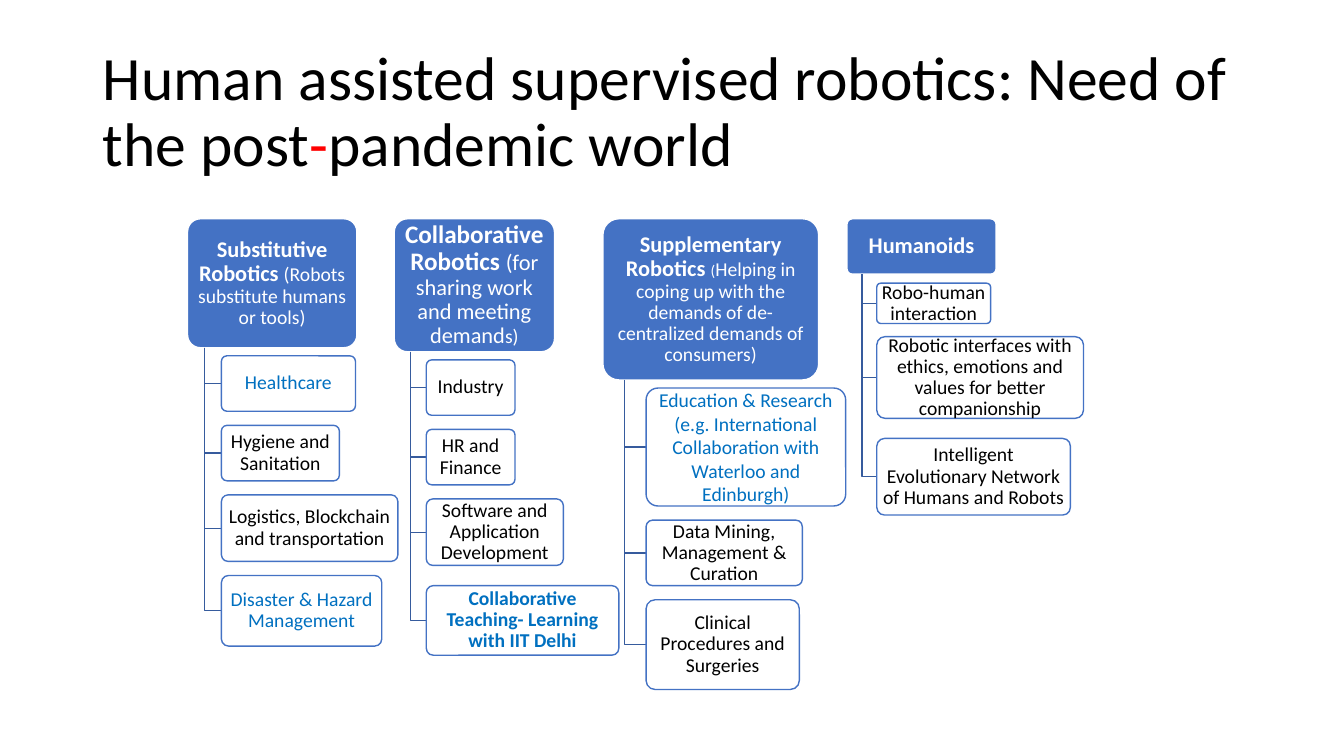
"""Builds the slide on four kinds of human assisted robotics as columns of linked boxes."""
from lxml import etree
from pptx import Presentation
from pptx import util as u
from pptx.dml.color import RGBColor
from pptx.enum import shapes, text
from pptx.oxml.ns import qn

FONT = "Calibri"
BLACK = RGBColor(0x00, 0x00, 0x00)
WHITE = RGBColor(0xFF, 0xFF, 0xFF)
RED = RGBColor(0xFF, 0x00, 0x00)
BLUE = RGBColor(0x44, 0x72, 0xC4)
LINK_BLUE = RGBColor(0x36, 0x5B, 0x9D)
ACCENT = RGBColor(0x00, 0x70, 0xC0)

HEADER_TOP = 2.17
TRUNK_SHARE = 0.1
CHILD_SHARE = 0.2

COLUMNS = [
    ((1.86, 1.68, 1.28),
     [("Substitutive Robotics ", 16, True), ("(Robots substitute humans or tools)", 14, False)],
     [(3.53, 1.33, 0.55, "Healthcare", ACCENT),
      (4.22, 1.17, 0.55, "Hygiene and Sanitation", BLACK),
      (4.91, 1.75, 0.66, "Logistics, Blockchain and transportation", BLACK),
      (5.71, 1.59, 0.7, "Disaster & Hazard Management", ACCENT)]),
    ((3.91, 1.59, 1.32),
     [("Collaborative Robotics ", 18, True), ("(for sharing work and meeting demand", 16, False),
      ("s)", 14, False)],
     [(3.57, 0.88, 0.55, "Industry", BLACK),
      (4.26, 0.88, 0.55, "HR and Finance", BLACK),
      (4.95, 1.36, 0.66, "Software and Application Development", BLACK),
      (5.81, 1.91, 0.69, "Collaborative Teaching- Learning with IIT Delhi", ACCENT, True)]),
    ((5.98, 2.14, 1.6),
     [("Supplementary Robotics ", 16, True), ("(", 11, False),
      ("Helping in coping up with the demands of de-centralized demands of consumers)", 14, False)],
     [(3.85, 1.98, 1.17, "Education & Research\n"
       "(e.g. International Collaboration with Waterloo and Edinburgh)", ACCENT, False, 1.0),
      (5.16, 1.55, 0.65, "Data Mining, Management & Curation", BLACK),
      (5.95, 1.52, 0.89, "Clinical Procedures and Surgeries", BLACK)]),
    ((8.4, 1.48, 0.55),
     [("Humanoids", 16, True)],
     [(2.81, 1.13, 0.4, "Robo-human interaction", BLACK),
      (3.34, 2.05, 0.81,
       "Robotic interfaces with ethics, emotions and values for better companionship", BLACK),
      (4.35, 1.92, 0.76, "Intelligent Evolutionary Network of Humans and Robots", BLACK)]),
]


class Slide:
    """Holds the current page and the style of its elements."""

    def __init__(self, page):
        self.page = page

    def title(self, parts):
        holder = self.page.shapes.title
        holder.left, holder.top = u.Inches(0.92), u.Inches(0.4)
        holder.width, holder.height = u.Inches(11.5), u.Inches(1.45)
        frame = holder.text_frame
        frame.auto_size = text.MSO_AUTO_SIZE.NONE
        frame.vertical_anchor = text.MSO_ANCHOR.MIDDLE
        para = frame.paragraphs[0]
        para.alignment = text.PP_ALIGN.LEFT
        para.line_spacing = 0.9
        para.font.name, para.font.size = FONT, u.Pt(44)
        for words, color in parts:
            span = para.add_run()
            span.text = words
            span.font.color.rgb = color

    def box(self, left, top, width, height, fill, line):
        box = self.page.shapes.add_shape(
            shapes.MSO_SHAPE.ROUNDED_RECTANGLE,
            u.Inches(left), u.Inches(top), u.Inches(width), u.Inches(height))
        box.adjustments[0] = 0.1
        box.shadow.inherit = False
        box.fill.solid()
        box.fill.fore_color.rgb = fill
        box.line.color.rgb = line
        box.line.width = u.Pt(1)
        frame = box.text_frame
        frame.word_wrap = True
        frame.vertical_anchor = text.MSO_ANCHOR.MIDDLE
        frame.margin_left = frame.margin_right = u.Inches(0.03)
        frame.margin_top = frame.margin_bottom = u.Inches(0.02)
        return box

    def style(self, para, color, spacing=0.9):
        para.alignment = text.PP_ALIGN.CENTER
        para.line_spacing = spacing
        para.font.name = FONT
        para.font.color.rgb = color

    def header(self, left, width, height, parts):
        box = self.box(left, HEADER_TOP, width, height, BLUE, WHITE)
        para = box.text_frame.paragraphs[0]
        self.style(para, WHITE)
        for words, size, bold in parts:
            span = para.add_run()
            span.text = words
            span.font.size, span.font.bold = u.Pt(size), bold

    def child(self, left, top, width, height, words, color, bold=False, spacing=0.9):
        box = self.box(left, top, width, height, WHITE, BLUE)
        tint = box.element.spPr.find(qn("a:solidFill"))[0]
        etree.SubElement(tint, qn("a:alpha")).set("val", "90000")
        box.text_frame.text = words
        for para in box.text_frame.paragraphs:
            self.style(para, color, spacing)
            para.font.size, para.font.bold = u.Pt(14), bold

    def elbow(self, trunk, top, right, middle):
        builder = self.page.shapes.build_freeform(u.Inches(trunk), u.Inches(top))
        corners = [(trunk, middle), (right, middle)]
        builder.add_line_segments([(u.Inches(x), u.Inches(y)) for x, y in corners], close=False)
        link = builder.convert_to_shape()
        link.shadow.inherit = False
        link.fill.background()
        link.line.color.rgb = LINK_BLUE
        link.line.width = u.Pt(1)

    def column(self, place, parts, children):
        left, width, height = place
        self.header(left, width, height, parts)
        trunk = left + TRUNK_SHARE * width
        child_left = left + CHILD_SHARE * width
        for top, child_width, child_height, *content in children:
            self.elbow(trunk, HEADER_TOP + height, child_left, top + child_height / 2)
            self.child(child_left, top, child_width, child_height, *content)


def main():
    deck = Presentation()
    deck.slide_width, deck.slide_height = u.Inches(13.33), u.Inches(7.5)
    slide = Slide(deck.slides.add_slide(deck.slide_layouts[5]))
    slide.title([("Human assisted supervised robotics: Need of the post", BLACK),
                 ("-", RED), ("pandemic world", BLACK)])
    for place, parts, children in COLUMNS:
        slide.column(place, parts, children)
    deck.save("out.pptx")


if __name__ == "__main__":
    main()
